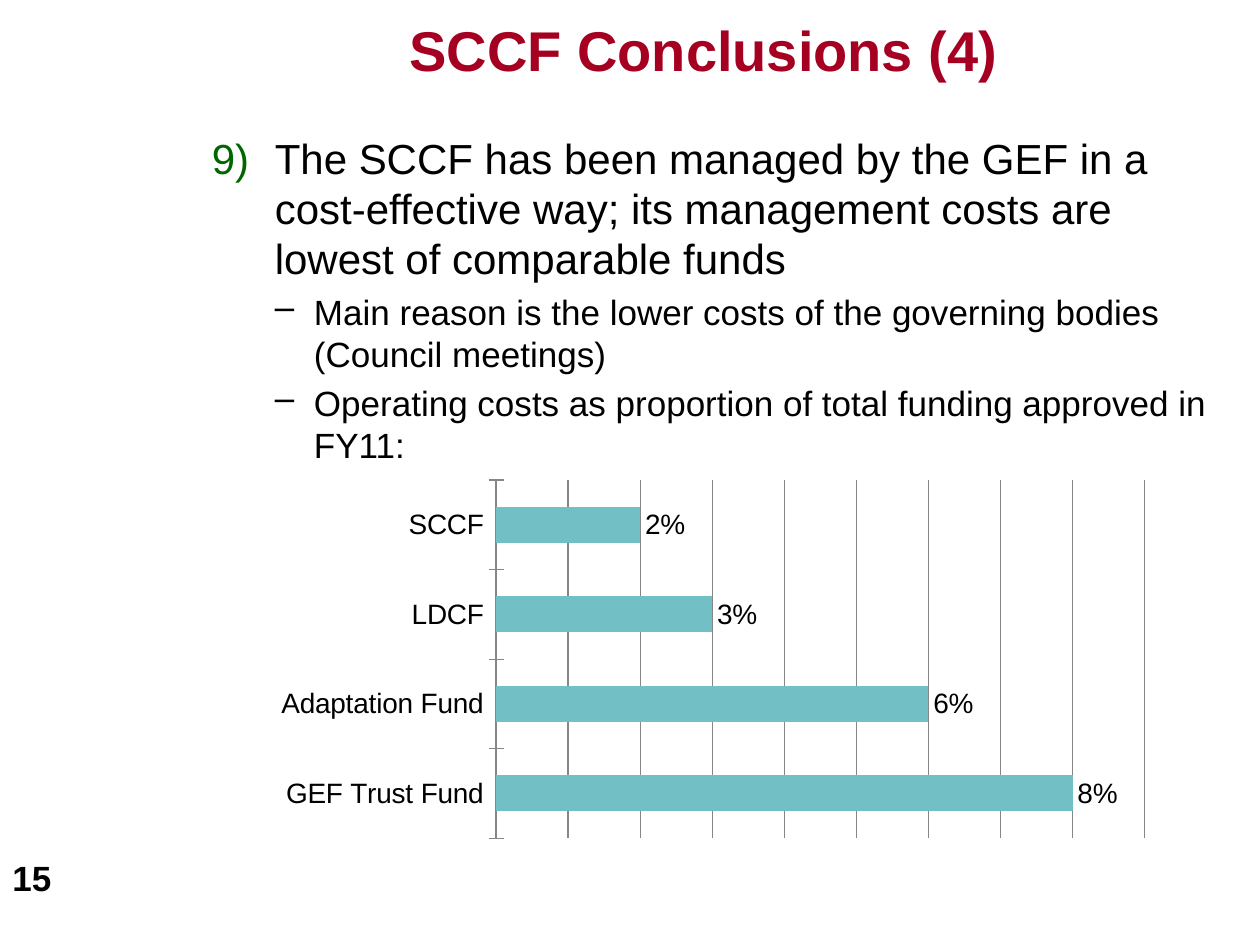
from dataclasses import dataclass

import pptx
import pptx.chart.data
import pptx.dml.color
import pptx.enum.chart
import pptx.enum.text
import pptx.oxml
import pptx.oxml.ns
import pptx.util
from lxml import etree
from pptx.util import Cm, Pt

ALIGN = pptx.enum.text.PP_ALIGN
ANCHOR = pptx.enum.text.MSO_ANCHOR


def rgb(value):
    return pptx.dml.color.RGBColor.from_string(value)


@dataclass(frozen=True)
class Theme:
    face: str = "Arial"
    title: str = "A50021"
    text: str = "000000"
    number: str = "006600"
    bar: str = "72BFC5"
    grid: str = "868686"
    title_size: int = 32
    point_size: int = 24
    detail_size: int = 20
    chart_size: int = 16


THEME = Theme()

CONCLUSION = ("The SCCF has been managed by the GEF in a cost-effective way; "
              "its management costs are lowest of comparable funds")
DETAILS = [
    "Main reason is the lower costs of the governing bodies (Council meetings)",
    "Operating costs as proportion of total funding approved in FY11:",
]
COST_SHARES = {"GEF Trust Fund": 0.08, "Adaptation Fund": 0.06,
               "LDCF": 0.03, "SCCF": 0.02}


def apply(target, formats):
    for name, value in formats.items():
        setattr(target, name, value)


def style_font(font, size, color=THEME.text, bold=False):
    apply(font, {"name": THEME.face, "size": Pt(size), "bold": bold})
    font.color.rgb = rgb(color)


def add_text_frame(slide, left, top, width, height, anchor=ANCHOR.TOP):
    frame = slide.shapes.add_textbox(left, top, width, height).text_frame
    apply(frame, {"word_wrap": True, "vertical_anchor": anchor})
    return frame


def add_line(slide, box, text, size, color=THEME.text,
             align=ALIGN.LEFT, anchor=ANCHOR.TOP):
    """Add a single bold line of text."""
    line = add_text_frame(slide, *box, anchor).paragraphs[0]
    apply(line, {"text": text, "alignment": align})
    style_font(line.font, size, color, bold=True)


def set_bullet(paragraph, margin, indent, tag, color=None, **attributes):
    properties = paragraph._p.get_or_add_pPr()
    properties.set("marL", str(margin))
    properties.set("indent", str(indent))
    if color:
        holder = etree.SubElement(properties, pptx.oxml.ns.qn("a:buClr"))
        etree.SubElement(holder, pptx.oxml.ns.qn("a:srgbClr"), val=color)
    etree.SubElement(properties, pptx.oxml.ns.qn(tag), **attributes)


def add_conclusion(slide):
    frame = add_text_frame(slide, Cm(4.02), Cm(2.54), Cm(20.74), Cm(7))
    point = frame.paragraphs[0]
    point.text = CONCLUSION
    set_bullet(point, Cm(1.27), Cm(-1.27), "a:buAutoNum", THEME.number,
               type="arabicParenR", startAt="9")
    style_font(point.font, THEME.point_size)
    for text in DETAILS:
        detail = frame.add_paragraph()
        apply(detail, {"text": text, "level": 1,
                       "space_before": Pt(THEME.detail_size * 0.2)})
        set_bullet(detail, Cm(2.06), Cm(-0.79), "a:buChar", char="–")
        style_font(detail.font, THEME.detail_size)


def set_plot_area(chart, **fractions):
    """Fix the inner plot area as fractions of the chart frame."""
    plot_area = chart._chartSpace.chart.plotArea
    for old in plot_area.findall(pptx.oxml.ns.qn("c:layout")):
        plot_area.remove(old)
    layout = etree.Element(pptx.oxml.ns.qn("c:layout"))
    manual = etree.SubElement(layout, pptx.oxml.ns.qn("c:manualLayout"))
    settings = {"layoutTarget": "inner", "xMode": "edge", "yMode": "edge",
                **fractions}
    for name, value in settings.items():
        etree.SubElement(manual, pptx.oxml.ns.qn(f"c:{name}"), val=str(value))
    plot_area.insert(0, layout)


def add_cost_chart(slide):
    data = pptx.chart.data.CategoryChartData(number_format="0%")
    data.categories = list(COST_SHARES)
    data.add_series("Series 1", list(COST_SHARES.values()))
    chart = slide.shapes.add_chart(
        pptx.enum.chart.XL_CHART_TYPE.BAR_CLUSTERED,
        Cm(5.28), Cm(9.53), Cm(18.16), Cm(7.52), data).chart
    apply(chart, {"has_legend": False, "has_title": False})
    style_font(chart.font, THEME.chart_size)
    set_plot_area(chart, x=0.26, y=0.02, w=0.72, h=0.96)

    funds, shares = chart.category_axis, chart.value_axis
    apply(funds, {"major_tick_mark": pptx.enum.chart.XL_TICK_MARK.CROSS,
                  "has_major_gridlines": False})
    apply(shares, {"minimum_scale": 0, "maximum_scale": 0.09,
                   "major_unit": 0.01, "has_major_gridlines": True,
                   "visible": False})
    for line in (funds.format.line, shares.major_gridlines.format.line):
        line.color.rgb = rgb(THEME.grid)
        line.width = Pt(0.75)

    plot = chart.plots[0]
    apply(plot, {"gap_width": 150, "vary_by_categories": False,
                 "has_data_labels": True})
    apply(plot.data_labels, {
        "show_value": True, "number_format": "0%",
        "number_format_is_linked": False,
        "position": pptx.enum.chart.XL_LABEL_POSITION.OUTSIDE_END})
    style_font(plot.data_labels.font, THEME.chart_size)
    bars = plot.series[0].format.fill
    bars.solid()
    bars.fore_color.rgb = rgb(THEME.bar)


def main():
    deck = pptx.Presentation()
    apply(deck, {"slide_width": Cm(25.4), "slide_height": Cm(19.05)})
    slide = deck.slides.add_slide(deck.slide_layouts[6])
    add_line(slide, (Cm(2.97), Cm(0), Cm(22.43), Cm(1.98)),
             "SCCF Conclusions (4)", THEME.title_size, THEME.title,
             ALIGN.CENTER, ANCHOR.MIDDLE)
    add_conclusion(slide)
    add_line(slide, (Cm(0), Cm(17.15), Cm(2.54), Cm(1.47)), "15",
             THEME.detail_size)
    add_cost_chart(slide)
    deck.save("out.pptx")


if __name__ == "__main__":
    main()
